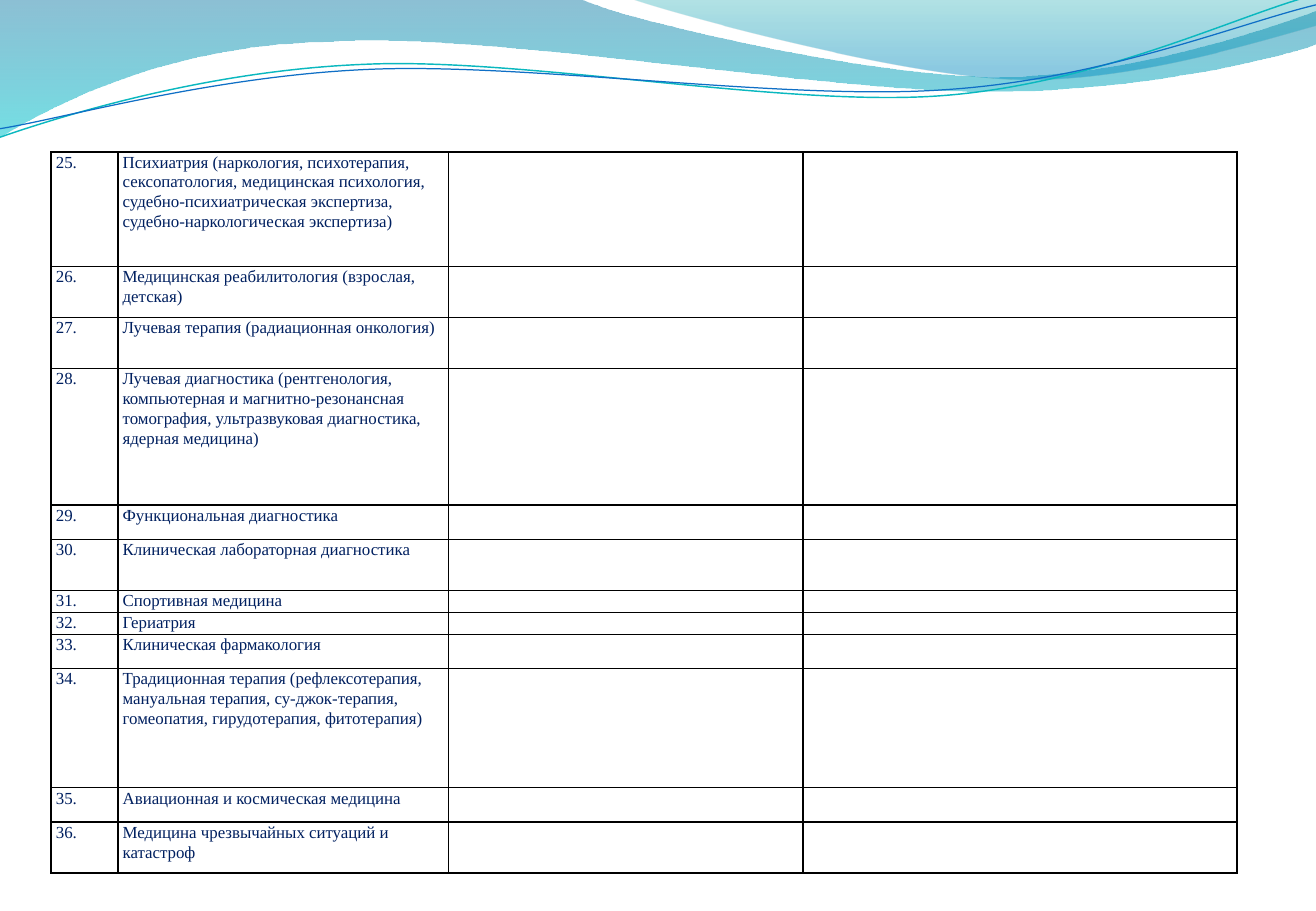
from math import cos, radians, sin

from lxml import etree
from pptx import Presentation
from pptx.dml.color import RGBColor
from pptx.oxml.ns import qn
from pptx.util import Inches, Pt

BLACK = RGBColor(0x00, 0x00, 0x00)
NAVY = RGBColor(0x00, 0x20, 0x60)
DEEP_BLUE = RGBColor(0x00, 0x74, 0xA1)
TURQUOISE = RGBColor(0x00, 0xC6, 0xCF)
TEAL = RGBColor(0x00, 0xA1, 0xA9)
SKY_BLUE = RGBColor(0x00, 0x8B, 0xBF)
LINE_TEAL = RGBColor(0x0A, 0xB8, 0xBF)
LINE_BLUE = RGBColor(0x0F, 0x6F, 0xC6)

FONT_NAME = "Times New Roman"
FONT_SIZE = 10
LINE_TILT = -2.7

# A wave starts at a point; two numbers add a straight line, six a Bezier curve.
WAVE_BANDS = [
    ([(0, 0), (4.77, -0.01),
      (5.15, 0.17, 7.19, 0.63, 8.22, 0.63), (9.24, 0.63, 10.38, 0.26, 10.83, 0.09),
      (10.84, 0.36),
      (10.65, 0.44, 9.42, 0.76, 8.08, 0.75), (6.74, 0.75, 4.14, 0.28, 2.79, 0.34),
      (1.4, 0.36, 0.5, 0.83, -0.01, 1.13), (0, 0)],
     [(0, DEEP_BLUE, 45), (1, TURQUOISE, 55)]),
    ([(5.19, -0.01),
      (5.52, 0.11, 7.39, 0.62, 8.33, 0.65), (9.27, 0.69, 10.42, 0.32, 10.83, 0.21),
      (10.83, 0), (5.19, -0.01)],
     [(0, TEAL, 30), (0.8, SKY_BLUE, 45)]),
]
WAVE_LINES = [
    ([(0, 1.13), (0.52, 0.95, 1.71, 0.58, 3, 0.53),
      (4.28, 0.47, 6.42, 0.88, 7.72, 0.79), (9.02, 0.7, 10.17, 0.13, 10.81, -0.04)],
     (5.41, 0.58), LINE_TEAL, 0.85),
    ([(0, 1.06), (0.51, 0.98, 1.77, 0.62, 3.07, 0.57),
      (4.36, 0.52, 6.47, 0.83, 7.76, 0.74), (9.06, 0.66, 10.2, 0.19, 10.83, 0.04)],
     (5.42, 0.59), LINE_BLUE, 0.75),
]

FIRST_NUMBER = 25
TABLE_HEIGHT = 5.94
COLUMN_WIDTHS = [0.55, 2.72, 2.92, 3.57]
SPECIALTIES = [
    ("Психиатрия (наркология, психотерапия, сексопатология, медицинская психология, "
     "судебно-психиатрическая экспертиза, судебно-наркологическая экспертиза)", 0.94),
    ("Медицинская реабилитология (взрослая, детская)", 0.42),
    ("Лучевая терапия (радиационная онкология)", 0.42),
    ("Лучевая диагностика (рентгенология, компьютерная и магнитно-резонансная "
     "томография, ультразвуковая диагностика, ядерная медицина)", 1.12),
    ("Функциональная диагностика", 0.28),
    ("Клиническая лабораторная диагностика", 0.42),
    ("Спортивная медицина", 0.18),
    ("Гериатрия", 0.18),
    ("Клиническая фармакология", 0.28),
    ("Традиционная терапия (рефлексотерапия, мануальная терапия, су-джок-терапия, "
     "гомеопатия, гирудотерапия, фитотерапия)", 0.98),
    ("Авиационная и космическая медицина", 0.28),
    ("Медицина чрезвычайных ситуаций и катастроф", 0.42),
]


def add_wave(slide, segments, close, center=(0, 0), tilt=0):
    """Draw the segments as one freeform that is tilted about its center."""
    center_x, center_y = center
    cosine, sine = cos(radians(-tilt)), sin(radians(-tilt))
    points = []
    for segment in segments:
        for x, y in zip(segment[::2], segment[1::2]):
            dx, dy = x - center_x, y - center_y
            points.append((Inches(center_x + dx * cosine - dy * sine),
                           Inches(center_y + dx * sine + dy * cosine)))
    builder = slide.shapes.build_freeform(*points[0], scale=1.0)
    builder.add_line_segments(points[1:], close=close)
    shape = builder.convert_to_shape()
    shape.shadow.inherit = False
    shape.rotation = tilt

    # Each run of three points of a curve becomes one Bezier element.
    corners = iter(list(shape._element.spPr.iter(qn("a:lnTo"))))
    for segment in segments[1:]:
        corner = next(corners)
        if len(segment) == 6:
            corner.tag = qn("a:cubicBezTo")
            for _ in range(2):
                extra = next(corners)
                corner.append(extra[0])
                extra.getparent().remove(extra)
    return shape


def add_borders(cell):
    properties = cell._tc.get_or_add_tcPr()
    for side in ("a:lnL", "a:lnR", "a:lnT", "a:lnB"):
        border = etree.SubElement(properties, qn(side), w=str(Pt(1)))
        fill = etree.SubElement(border, qn("a:solidFill"))
        etree.SubElement(fill, qn("a:srgbClr"), val=str(BLACK))


presentation = Presentation()
presentation.slide_width = Inches(10.83)
presentation.slide_height = Inches(7.5)
slide = presentation.slides.add_slide(presentation.slide_layouts[6])

for segments, stops in WAVE_BANDS:
    band = add_wave(slide, segments, True)
    band.line.fill.background()
    band.fill.gradient()
    band.fill.gradient_angle = 270
    for gradient_stop, (position, color, _) in zip(band.fill.gradient_stops, stops):
        gradient_stop.position = position
        gradient_stop.color.rgb = color
    colors = band._element.spPr.iter(qn("a:srgbClr"))
    for color_element, (_, _, opacity) in zip(list(colors), stops):
        etree.SubElement(color_element, qn("a:alpha"), val=str(opacity * 1000))

for segments, center, color, width in WAVE_LINES:
    wave_line = add_wave(slide, segments, False, center, LINE_TILT)
    wave_line.fill.background()
    wave_line.line.color.rgb = color
    wave_line.line.width = Pt(width)

table = slide.shapes.add_table(
    len(SPECIALTIES), len(COLUMN_WIDTHS),
    Inches(0.42), Inches(1.25), Inches(9.77), Inches(TABLE_HEIGHT)).table
table.first_row = False
table.horz_banding = False
for column, width in zip(table.columns, COLUMN_WIDTHS):
    column.width = Inches(width)

row_scale = TABLE_HEIGHT / sum(height for _, height in SPECIALTIES)
for index, (specialty, height) in enumerate(SPECIALTIES):
    row = table.rows[index]
    row.height = Inches(height * row_scale)
    texts = [f"{FIRST_NUMBER + index}.", specialty, "", ""]
    for cell, text in zip(row.cells, texts):
        cell.margin_left = cell.margin_right = Inches(0.04)
        cell.margin_top = cell.margin_bottom = 0
        add_borders(cell)
        cell.fill.background()
        paragraph = cell.text_frame.paragraphs[0]
        paragraph.line_spacing = 1.07
        if text:
            run = paragraph.add_run()
            run.text = text
            run.font.name = FONT_NAME
            run.font.size = Pt(FONT_SIZE)
            run.font.color.rgb = NAVY
        else:
            # Keeps empty cells from stretching the low rows.
            etree.SubElement(paragraph._p, qn("a:endParaRPr"), sz=str(FONT_SIZE * 100))

presentation.save("out.pptx")
